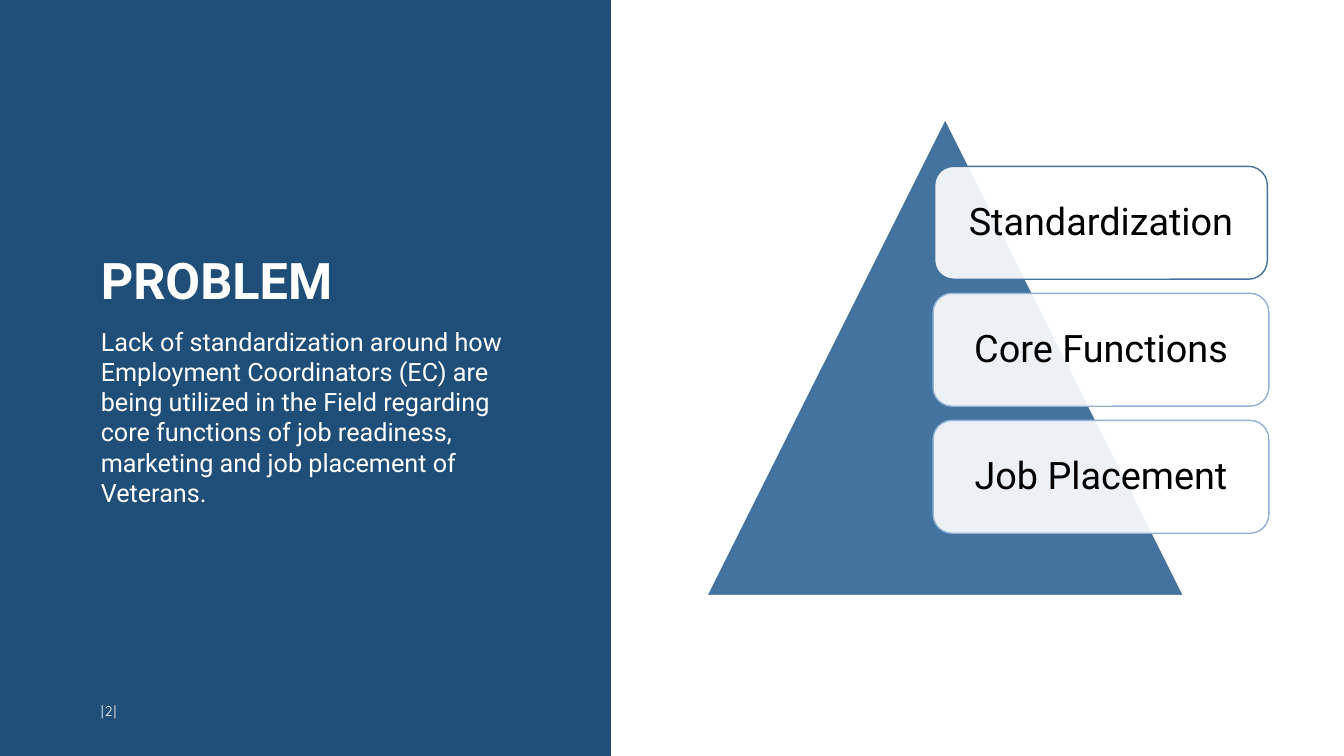
from lxml import etree
from pptx import Presentation
from pptx import util as u
from pptx.dml.color import RGBColor
from pptx.enum import shapes, text
from pptx.oxml.ns import qn

# Content
HEADING = "PROBLEM"
BODY = ("Lack of standardization around how Employment Coordinators (EC) are "
        "being utilized in the Field regarding core functions of job readiness, "
        "marketing and job placement of Veterans.")
PAGE_NUMBER = "| 2 |"
# label, width in inches, outline colour
BOXES = [
    ("Standardization", 3.3, "43739E"),
    ("Core Functions", 3.33, "91B1D6"),
    ("Job Placement", 3.33, "91B1D6"),
]

# Layout, in inches
SLIDE_W, SLIDE_H = 13.33, 7.5
PANEL_W = 6.06
MARGIN = 1
TRIANGLE_LEFT, TRIANGLE_TOP, TRIANGLE_SIZE = 7.01, 1.18, 4.73
BOX_CENTER, BOX_TOP, BOX_H, BOX_PITCH = 10.92, 1.65, 1.12, 1.26
WHITE, BLACK = "FFFFFF", "000000"


def color(hex_value):
    return RGBColor.from_string(hex_value)


def add_shape(parent, kind, left, top, width, height, fill, line=None):
    shape = parent.add_shape(kind, *map(u.Inches, (left, top, width, height)))
    shape.shadow.inherit = False
    shape.fill.solid()
    shape.fill.fore_color.rgb = color(fill)
    if line:
        shape.line.color.rgb = color(line)
        shape.line.width = u.Pt(1)
    else:
        shape.line.fill.background()
    return shape


def set_frame(shape, insets, anchor):
    frame = shape.text_frame
    frame.word_wrap = True
    frame.vertical_anchor = anchor
    (frame.margin_left, frame.margin_top,
     frame.margin_right, frame.margin_bottom) = map(u.Inches, insets)
    return frame


def write(paragraph, words, size, hex_value, align=text.PP_ALIGN.LEFT,
          bold=False, name="Roboto", after=0):
    paragraph.text = words
    paragraph.alignment = align
    paragraph.space_after = u.Pt(after)
    font = paragraph.font
    font.size, font.bold, font.name = u.Pt(size), bold, name
    font.color.rgb = color(hex_value)


presentation = Presentation()
presentation.slide_width = u.Inches(SLIDE_W)
presentation.slide_height = u.Inches(SLIDE_H)
slide = presentation.slides.add_slide(presentation.slide_layouts[6])

# Left panel with the problem statement
panel = add_shape(slide.shapes, shapes.MSO_SHAPE.RECTANGLE,
                  0, 0, PANEL_W, SLIDE_H, "1F4E79")
frame = set_frame(panel, (MARGIN, 0, MARGIN, 0), text.MSO_ANCHOR.MIDDLE)
write(frame.paragraphs[0], HEADING, 36, WHITE, bold=True, after=12)
write(frame.add_paragraph(), BODY, 18, WHITE, after=6)

# Triangle with the stacked boxes
pyramid = slide.shapes.add_group_shape().shapes
add_shape(pyramid, shapes.MSO_SHAPE.ISOSCELES_TRIANGLE, TRIANGLE_LEFT,
          TRIANGLE_TOP, TRIANGLE_SIZE, TRIANGLE_SIZE, "43739E", WHITE)
for row, (label, width, outline) in enumerate(BOXES):
    box = add_shape(pyramid, shapes.MSO_SHAPE.ROUNDED_RECTANGLE,
                    BOX_CENTER - width / 2, BOX_TOP + row * BOX_PITCH,
                    width, BOX_H, WHITE, outline)
    fill_color = box.fill._xPr.find(qn("a:solidFill"))[0]
    etree.SubElement(fill_color, qn("a:alpha"), val="90000")
    frame = set_frame(box, (0.16, 0.16, 0.16, 0.16), text.MSO_ANCHOR.MIDDLE)
    write(frame.paragraphs[0], label, 27, BLACK, text.PP_ALIGN.CENTER)
    frame.paragraphs[0].line_spacing = 0.9

# Page number
number = slide.shapes.add_textbox(*map(u.Inches, (MARGIN, 6.92, 0.97, 0.27)))
frame = set_frame(number, (0, 0.05, 0.1, 0.05), text.MSO_ANCHOR.TOP)
frame.auto_size = text.MSO_AUTO_SIZE.SHAPE_TO_FIT_TEXT
write(frame.paragraphs[0], PAGE_NUMBER, 10, WHITE, name="Quicksand", after=6)
run = frame.paragraphs[0].runs[0]
run._r.get_or_add_rPr().set("spc", "-100")

presentation.save("out.pptx")
